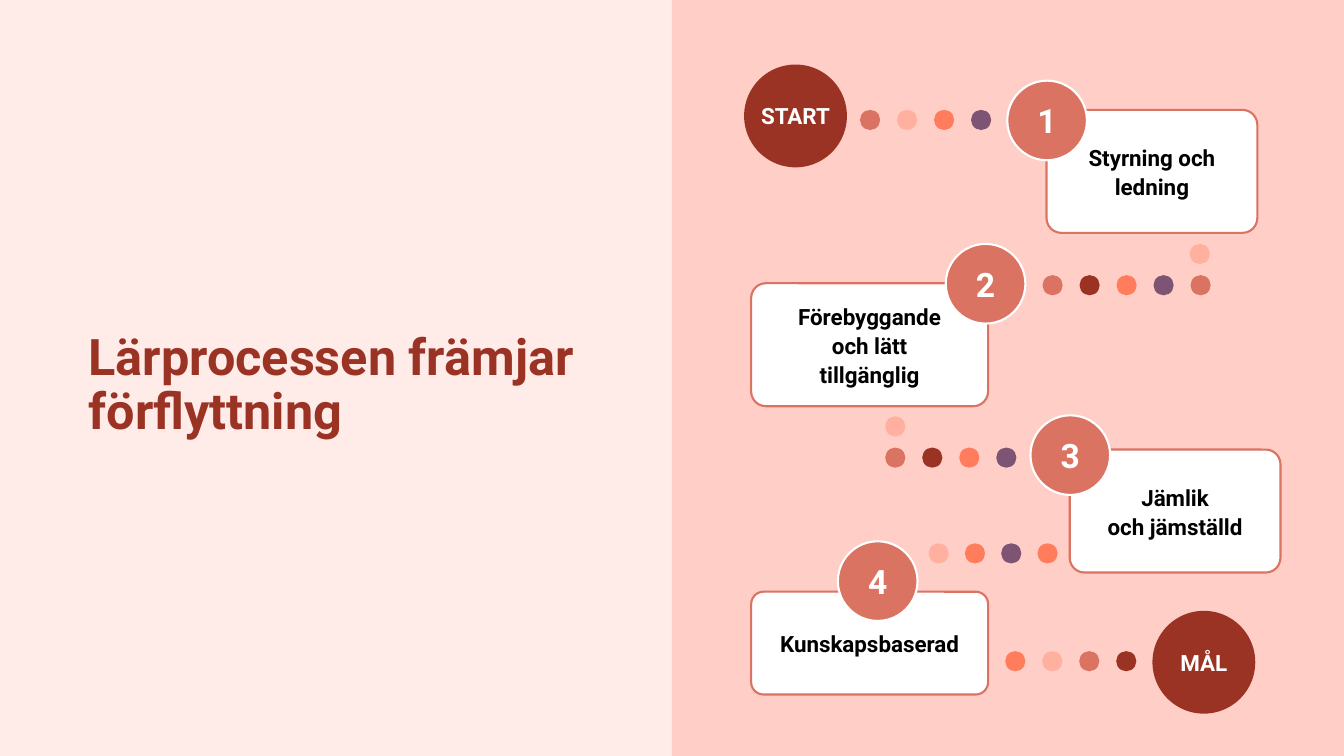
from pptx import Presentation
from pptx.dml.color import RGBColor
from pptx.enum.shapes import MSO_SHAPE
from pptx.enum.text import MSO_ANCHOR, PP_ALIGN
from pptx.util import Inches, Pt

OVAL, RECT, ROUNDED = MSO_SHAPE.OVAL, MSO_SHAPE.RECTANGLE, MSO_SHAPE.ROUNDED_RECTANGLE
MIDDLE, BOTTOM = MSO_ANCHOR.MIDDLE, MSO_ANCHOR.BOTTOM
LEFT, CENTER = PP_ALIGN.LEFT, PP_ALIGN.CENTER

WIDTH, HEIGHT = Inches(13.33), Inches(7.5)
ROWS = 75
CELL = HEIGHT / ROWS

FONT = "Roboto"
BLUSH, ROSE, WHITE, BLACK = "FFEBE8", "FFCEC6", "FFFFFF", "000000"
BRICK, CORAL, PEACH, ORANGE, PLUM = "9A3324", "DB7363", "FFB09E", "FF7C5D", "7E5475"

DOT, DOT_STEP = 2, 3.67
BADGE, TERMINAL = 7.9, 10.2

TRAILS = [
    (85.3, 10.9, DOT_STEP, [CORAL, PEACH, ORANGE, PLUM]),
    (103.4, 27.3, DOT_STEP, [CORAL, BRICK, ORANGE, PLUM, CORAL]),
    (118, 24.2, DOT_STEP, [PEACH]),
    (87.8, 44.4, DOT_STEP, [CORAL, BRICK, ORANGE, PLUM]),
    (87.8, 41.3, DOT_STEP, [PEACH]),
    (92.1, 53.9, 3.6, [PEACH, ORANGE, PLUM, ORANGE]),
    (99.7, 64.6, DOT_STEP, [ORANGE, PEACH, CORAL, BRICK]),
]

STEPS = [
    ("Styrning och ledning", (103.8, 10.9, 20.9, 12.2), (99.9, 8)),
    ("Förebyggande\noch lätt\ntillgänglig", (74.5, 28.1, 23.5, 12.2), (93.8, 24.2)),
    ("Jämlik\noch jämställd", (106.1, 44.6, 20.9, 12.2), (102.2, 41.2)),
    ("Kunskapsbaserad", (74.5, 58.7, 23.5, 10.2), (83.1, 53.7)),
]


def rgb(value):
    return RGBColor.from_string(value)


def grid(*cells):
    return [round(c * CELL) for c in cells]


def write(sp, text, size, color, align=CENTER, anchor=MIDDLE, spacing=1.0):
    tf = sp.text_frame
    tf.word_wrap = True
    tf.vertical_anchor = anchor
    p = tf.paragraphs[0]
    p.text = text.replace("\n", "\v")
    p.alignment = align
    p.line_spacing = spacing
    for r in p.runs:
        r.font.name = FONT
        r.font.size = Pt(size)
        r.font.bold = True
        r.font.color.rgb = rgb(color)


def add_shape(s, kind, box, fill, line=None):
    sp = s.shapes.add_shape(kind, *grid(*box))
    sp.shadow.inherit = False
    sp.fill.solid()
    sp.fill.fore_color.rgb = rgb(fill)
    if line:
        sp.line.color.rgb = rgb(line)
        sp.line.width = Pt(1.5)
    else:
        sp.line.fill.background()
    return sp


def add_title(s, text):
    sp = s.shapes.add_textbox(*grid(7.8, 30.7, 53.2, 13.5))
    write(sp, text, 36, BRICK, LEFT, BOTTOM, 0.9)


def add_trail(s, left, top, step, colors):
    for i, color in enumerate(colors):
        add_shape(s, OVAL, (left + i * step, top, DOT, DOT), color)


def add_terminal(s, text, left, top):
    sp = add_shape(s, OVAL, (left, top, TERMINAL, TERMINAL), BRICK)
    tf = sp.text_frame
    tf.margin_left = tf.margin_right = tf.margin_top = tf.margin_bottom = 0
    write(sp, text, 16, WHITE)


def add_step(s, number, text, box, badge_at):
    card = add_shape(s, ROUNDED, box, WHITE, CORAL)
    card.adjustments[0] = 0.12
    write(card, text, 16, BLACK, spacing=1.07)
    badge = add_shape(s, OVAL, (*badge_at, BADGE, BADGE), CORAL, WHITE)
    write(badge, str(number), 24, WHITE)


def main():
    prs = Presentation()
    prs.slide_width, prs.slide_height = WIDTH, HEIGHT
    s = prs.slides.add_slide(prs.slide_layouts[6])
    s.background.fill.solid()
    s.background.fill.fore_color.rgb = rgb(BLUSH)

    half = WIDTH / CELL / 2
    add_shape(s, RECT, (half, 0, half, ROWS), ROSE)
    add_title(s, "Lärprocessen främjar förflyttning")
    for trail in TRAILS:
        add_trail(s, *trail)
    add_terminal(s, "START", 73.8, 6.4)
    add_terminal(s, "MÅL", 114.3, 60.6)
    for number, step in enumerate(STEPS, 1):
        add_step(s, number, *step)

    prs.save("out.pptx")


if __name__ == "__main__":
    main()
